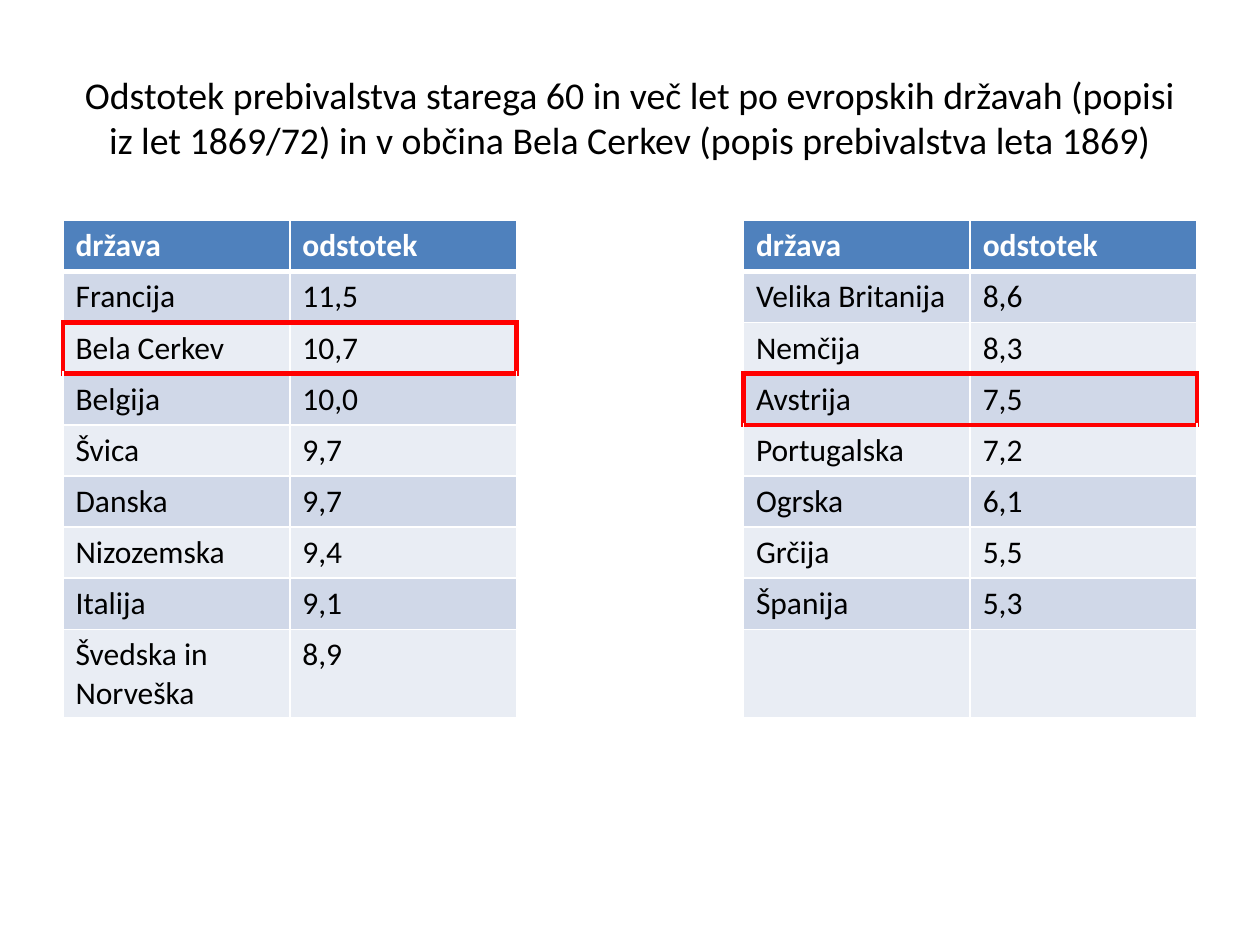
from dataclasses import dataclass

from lxml.etree import SubElement
from pptx import Presentation
from pptx.dml.color import RGBColor
from pptx.enum.text import MSO_ANCHOR, PP_ALIGN
from pptx.oxml.ns import qn
from pptx.util import Inches, Pt

TITLE = ("Odstotek prebivalstva starega 60 in več let po evropskih državah "
         "(popisi iz let 1869/72) in v občina Bela Cerkev "
         "(popis prebivalstva leta 1869)")
HEADER = ("država", "odstotek")
LEFT_ROWS = [
    ("Francija", "11,5"), ("Bela Cerkev", "10,7"), ("Belgija", "10,0"),
    ("Švica", "9,7"), ("Danska", "9,7"), ("Nizozemska", "9,4"),
    ("Italija", "9,1"), ("Švedska in Norveška", "8,9"),
]
RIGHT_ROWS = [
    ("Velika Britanija", "8,6"), ("Nemčija", "8,3"), ("Avstrija", "7,5"),
    ("Portugalska", "7,2"), ("Ogrska", "6,1"), ("Grčija", "5,5"),
    ("Španija", "5,3"), ("", ""),
]
HIGHLIGHTS = {0: "Bela Cerkev", 3: "Avstrija"}  # first column of block: country
GAP_COLUMN = 2


@dataclass(frozen=True)
class Theme:
    font: str = "Calibri"
    title_size: float = 21.6
    cell_size: float = 18
    text: str = "000000"
    white: str = "FFFFFF"
    header: str = "4F81BD"
    odd_row: str = "D0D8E8"
    even_row: str = "E9EDF4"
    highlight: str = "FF0000"
    thin: float = 1
    thick: float = 3


THEME = Theme()


def format_text(paragraph, size, color, bold=False):
    for run in paragraph.runs:
        font = run.font
        font.name, font.size, font.bold = THEME.font, Pt(size), bold
        font.color.rgb = RGBColor.from_string(color)


def set_borders(cell, borders):
    """Draw the given (colour, points) lines, keyed by side L, R, T, B."""
    properties = cell._tc.get_or_add_tcPr()
    for index, side in enumerate("LRTB"):
        color, points = borders[side]
        line = SubElement(properties, qn(f"a:ln{side}"), w=str(Pt(points)))
        fill = SubElement(line, qn("a:solidFill"))
        SubElement(fill, qn("a:srgbClr"), val=color)
        properties.insert(index, line)


def cell_borders(row, column, rows):
    white = (THEME.white, THEME.thin)
    red = (THEME.highlight, THEME.thick)
    borders = dict.fromkeys("LRTB", white)
    if row == 0:
        borders["B"] = (THEME.white, THEME.thick)
    for first, country in HIGHLIGHTS.items():
        if column not in (first, first + 1):
            continue
        marked = next(i for i, cells in enumerate(rows) if cells[first] == country)
        if row == marked:
            outer = "L" if column == first else "R"
            borders.update({"T": red, "B": red, outer: red})
        elif row == marked - 1:
            borders["B"] = red
        elif row == marked + 1:
            borders["T"] = red
    return borders


def add_title(slide):
    box = slide.shapes.add_textbox(Inches(0.5), Inches(0.3), Inches(9), Inches(1.25))
    frame = box.text_frame
    frame.word_wrap = True
    frame.vertical_anchor = MSO_ANCHOR.MIDDLE
    frame.text = TITLE
    paragraph = frame.paragraphs[0]
    paragraph.alignment = PP_ALIGN.CENTER
    format_text(paragraph, THEME.title_size, THEME.text)


def add_percentage_table(slide):
    rows = [(*left, "", *right) for left, right in
            zip([HEADER] + LEFT_ROWS, [HEADER] + RIGHT_ROWS)]
    table = slide.shapes.add_table(
        len(rows), len(rows[0]),
        Inches(0.5), Inches(1.75), Inches(9), Inches(3.65)).table
    table.first_row = table.horz_banding = False

    for row, values in enumerate(rows):
        is_header = row == 0
        row_fill = (THEME.header if is_header
                    else THEME.odd_row if row % 2 else THEME.even_row)
        for column, value in enumerate(values):
            cell = table.cell(row, column)
            cell.text = value
            paragraph = cell.text_frame.paragraphs[0]
            paragraph.font.size = Pt(THEME.cell_size)
            format_text(paragraph, THEME.cell_size,
                        THEME.white if is_header else THEME.text, is_header)
            cell.fill.solid()
            cell.fill.fore_color.rgb = RGBColor.from_string(
                THEME.white if column == GAP_COLUMN else row_fill)
            set_borders(cell, cell_borders(row, column, rows))
    table.cell(0, GAP_COLUMN).merge(table.cell(len(rows) - 1, GAP_COLUMN))


def main():
    presentation = Presentation()
    presentation.slide_width, presentation.slide_height = Inches(10), Inches(7.5)
    slide = presentation.slides.add_slide(presentation.slide_layouts[6])
    add_title(slide)
    add_percentage_table(slide)
    presentation.save("out.pptx")


if __name__ == "__main__":
    main()
